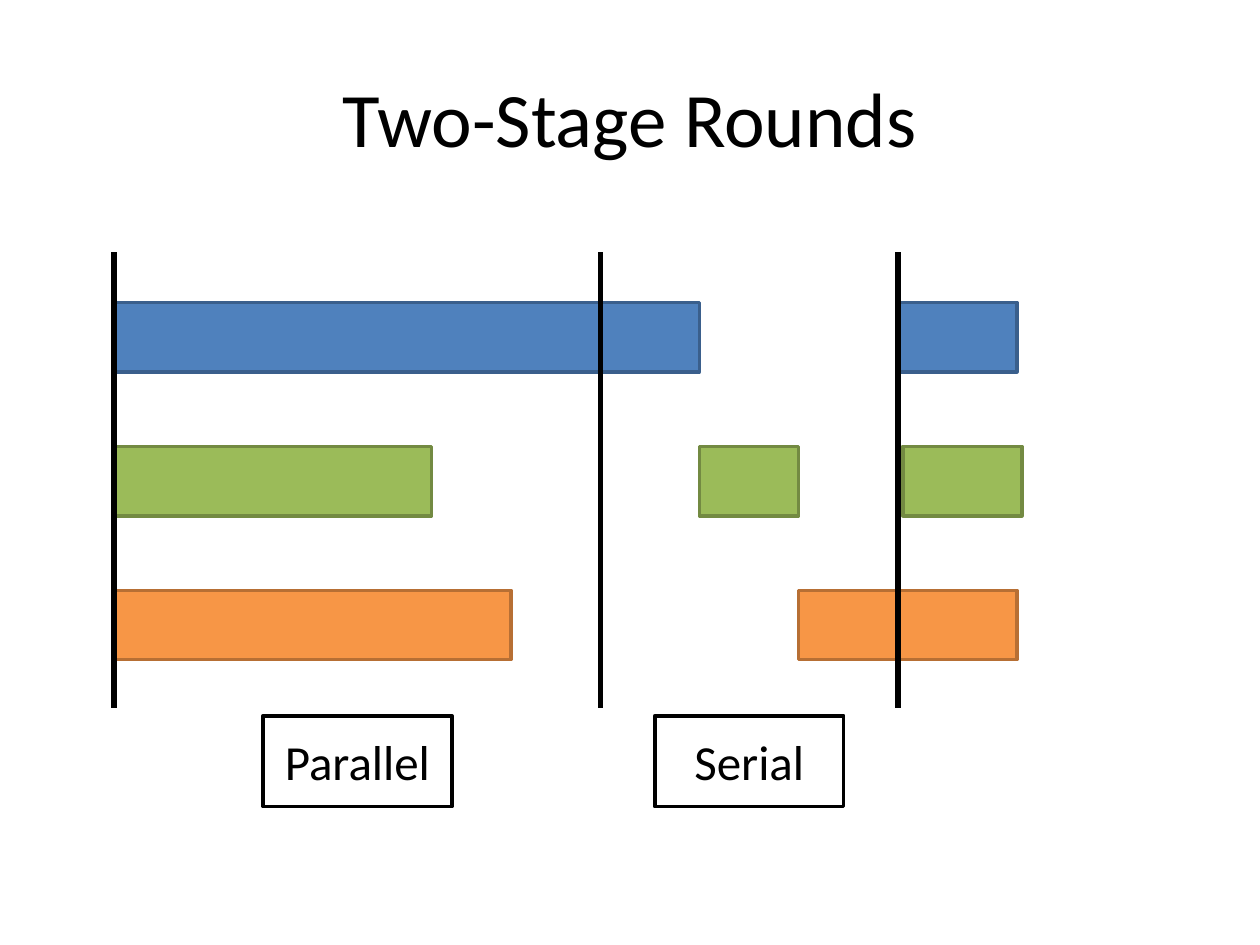
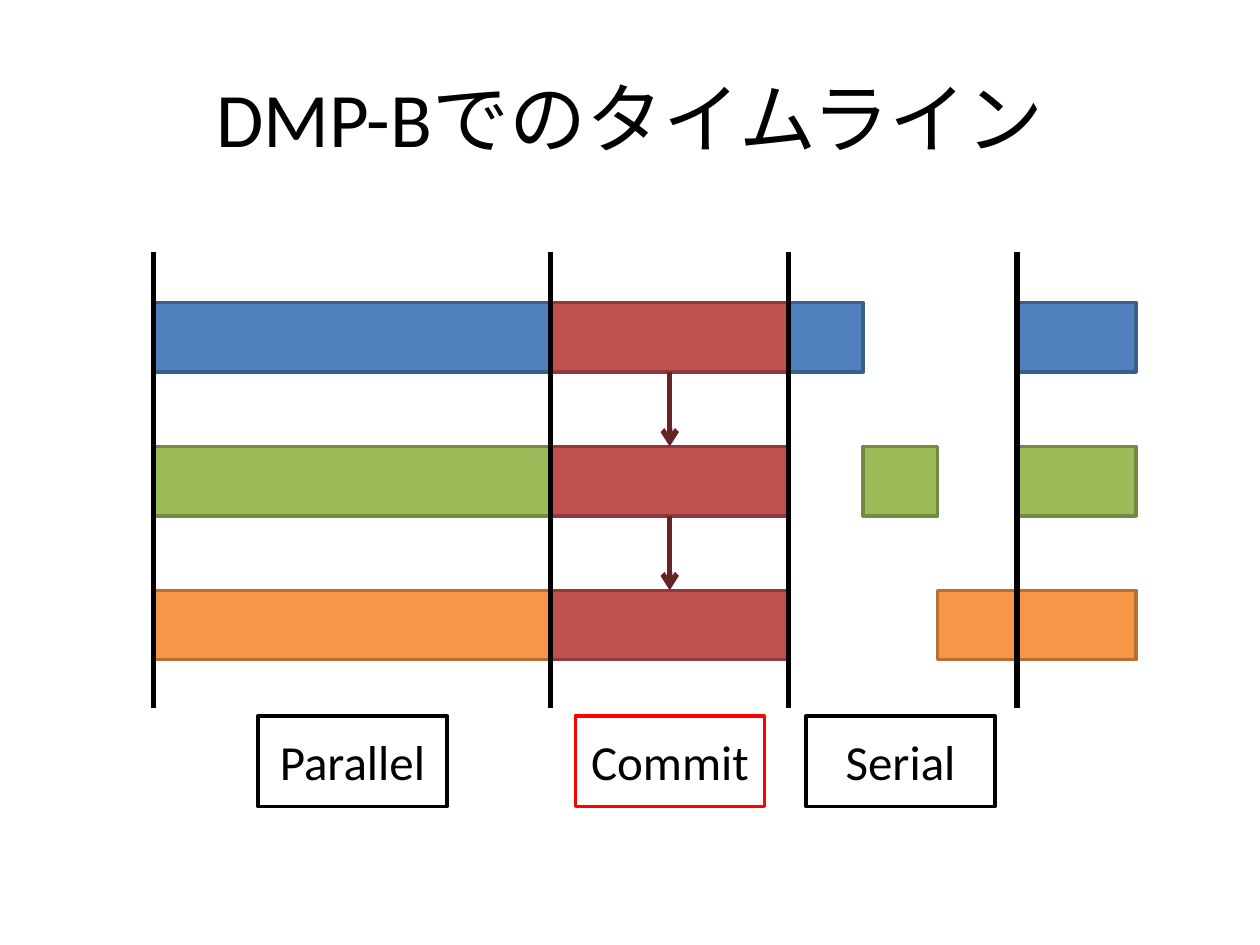
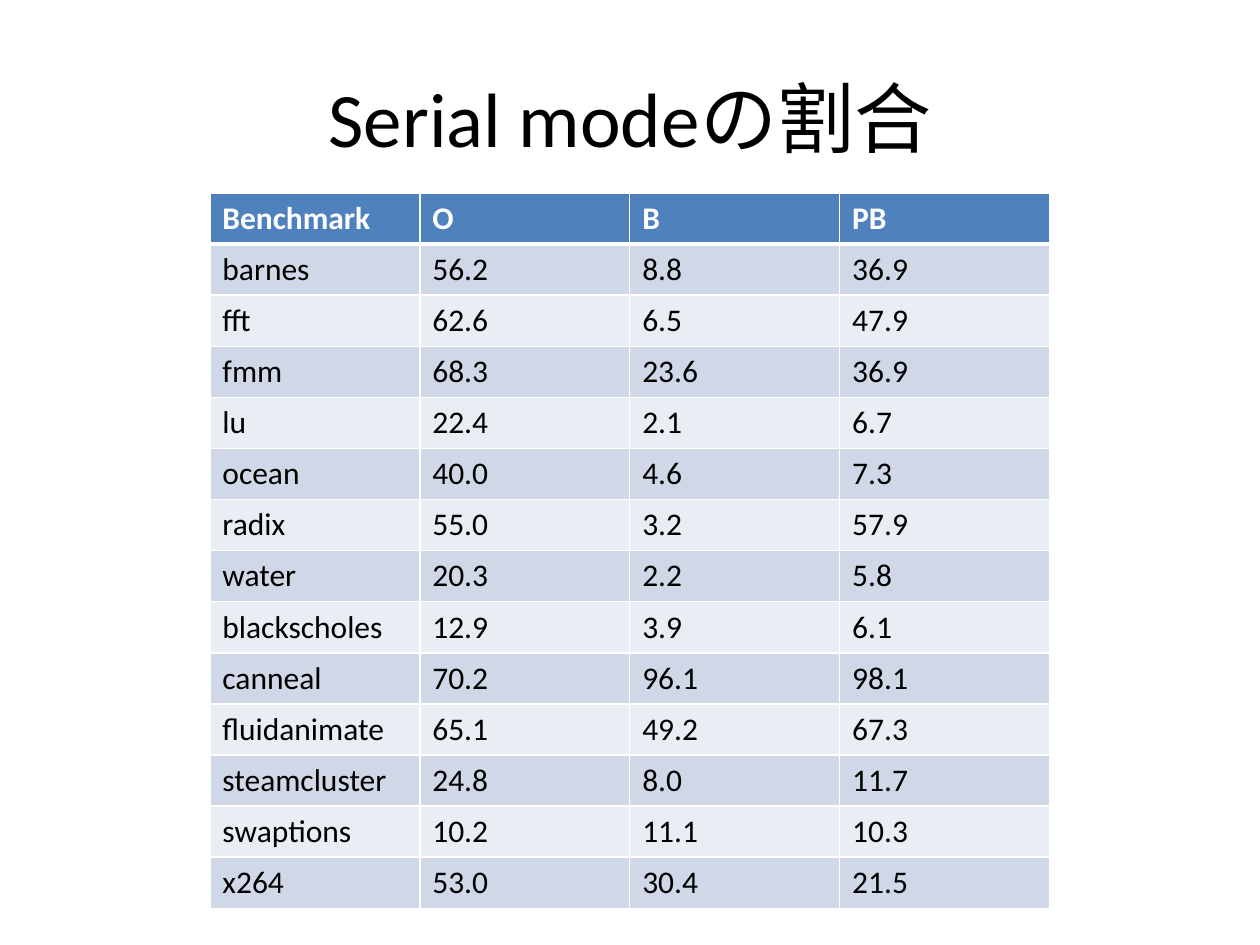
from lxml import etree
from pptx import Presentation
from pptx import util as u
from pptx.dml.color import RGBColor
from pptx.enum import shapes, text
from pptx.oxml import ns

FONT = "Calibri"
COLORS = {
    "black": "000000", "white": "FFFFFF", "red": "FF0000", "arrow": "632523",
    "header": "4F81BD", "odd": "D0D8E8", "even": "E9EDF4",
    "blue": "4F81BD", "blue_edge": "3A5F8C",
    "green": "9BBB59", "green_edge": "738A42",
    "orange": "F79646", "orange_edge": "B76F34",
    "commit": "C0504D", "commit_edge": "8E3B39",
}

TIMELINES = [
    {
        "title": "Two-Stage Rounds",
        "bars": [
            ("blue", 0, 2.3, 9.8), ("green", 1, 2.3, 6.4), ("orange", 2, 2.3, 8),
            ("blue", 0, 12.1, 2), ("green", 1, 14.1, 2), ("orange", 2, 16.1, 2),
            ("blue", 0, 18.1, 2.4), ("green", 1, 18.2, 2.4), ("orange", 2, 18.1, 2.4),
        ],
        "barriers": [2.3, 12.1, 18.1],
        "labels": [("Parallel", 5.3, "black"), ("Serial", 13.2, "black")],
    },
    {
        "title": "DMP-Bでのタイムライン",
        "bars": [
            ("blue", 0, 3.1, 8), ("green", 1, 3.1, 8), ("orange", 2, 3.1, 8),
            ("commit", 0, 11.1, 4.8), ("commit", 1, 11.1, 4.8), ("commit", 2, 11.1, 4.8),
            ("blue", 0, 15.9, 1.5), ("green", 1, 17.4, 1.5), ("orange", 2, 18.9, 1.6),
            ("blue", 0, 20.5, 2.4), ("green", 1, 20.5, 2.4), ("orange", 2, 20.5, 2.4),
        ],
        "barriers": [3.1, 11.1, 15.9, 20.5],
        "labels": [("Parallel", 5.2, "black"), ("Commit", 11.6, "red"), ("Serial", 16.25, "black")],
    },
]

TABLE_TITLE = "Serial modeの割合"
TABLE_ROWS = [
    ("Benchmark", "O", "B", "PB"),
    ("barnes", "56.2", "8.8", "36.9"),
    ("fft", "62.6", "6.5", "47.9"),
    ("fmm", "68.3", "23.6", "36.9"),
    ("lu", "22.4", "2.1", "6.7"),
    ("ocean", "40.0", "4.6", "7.3"),
    ("radix", "55.0", "3.2", "57.9"),
    ("water", "20.3", "2.2", "5.8"),
    ("blackscholes", "12.9", "3.9", "6.1"),
    ("canneal", "70.2", "96.1", "98.1"),
    ("fluidanimate", "65.1", "49.2", "67.3"),
    ("steamcluster", "24.8", "8.0", "11.7"),
    ("swaptions", "10.2", "11.1", "10.3"),
    ("x264", "53.0", "30.4", "21.5"),
]

BAR_TOP, BAR_PITCH, BAR_HEIGHT = 6.1, 2.9, 1.4
BARRIER_TOP, BARRIER_BOTTOM = 5.08, 14.28
LABEL_TOP, LABEL_WIDTH, LABEL_HEIGHT = 14.43, 3.81, 1.83
TABLE_LEFT, TABLE_TOP, TABLE_WIDTH, TABLE_HEIGHT = 4.23, 3.89, 16.93, 14.43


def color(name):
    return RGBColor.from_string(COLORS[name])


def write(frame, words, size, color_name="black", bold=False, align=text.PP_ALIGN.CENTER):
    frame.word_wrap = True
    paragraph = frame.paragraphs[0]
    paragraph.alignment = align
    run = paragraph.add_run()
    run.text = words
    run.font.name = FONT
    run.font.size = u.Pt(size)
    run.font.bold = bold
    run.font.color.rgb = color(color_name)


def add_titled_slide(presentation, title):
    slide = presentation.slides.add_slide(presentation.slide_layouts[6])
    box = slide.shapes.add_textbox(u.Cm(1.27), u.Cm(0.76), u.Cm(22.86), u.Cm(3.18))
    box.text_frame.vertical_anchor = text.MSO_ANCHOR.MIDDLE
    write(box.text_frame, title, 44)
    return slide


def add_box(slide, left, top, width, height, fill, edge):
    shape = slide.shapes.add_shape(
        shapes.MSO_SHAPE.RECTANGLE, u.Cm(left), u.Cm(top), u.Cm(width), u.Cm(height))
    shape.shadow.inherit = False
    shape.fill.solid()
    shape.fill.fore_color.rgb = color(fill)
    shape.line.color.rgb = color(edge)
    shape.line.width = u.Pt(2)
    return shape


def add_line(slide, color_name, left=0, top=0, bottom=0):
    line = slide.shapes.add_connector(
        shapes.MSO_CONNECTOR.STRAIGHT, u.Cm(left), u.Cm(top), u.Cm(left), u.Cm(bottom))
    line.line.color.rgb = color(color_name)
    line.line.width = u.Pt(3)
    etree.SubElement(line._element.spPr, ns.qn("a:effectLst"))
    return line


def add_arrow(slide, upper, lower):
    arrow = add_line(slide, "arrow")
    arrow.begin_connect(upper, 2)
    arrow.end_connect(lower, 0)
    etree.SubElement(arrow.line._get_or_add_ln(), ns.qn("a:tailEnd"), type="arrow")


def add_timeline(presentation, timeline):
    slide = add_titled_slide(presentation, timeline["title"])
    commits = []
    for name, row, left, width in timeline["bars"]:
        bar = add_box(slide, left, BAR_TOP + row * BAR_PITCH, width, BAR_HEIGHT,
                      name, name + "_edge")
        if name == "commit":
            commits.append(bar)
    for left in timeline["barriers"]:
        add_line(slide, "black", left, BARRIER_TOP, BARRIER_BOTTOM)
    for words, left, edge in timeline["labels"]:
        label = add_box(slide, left, LABEL_TOP, LABEL_WIDTH, LABEL_HEIGHT, "white", edge)
        label.text_frame.vertical_anchor = text.MSO_ANCHOR.MIDDLE
        write(label.text_frame, words, 28)
    for upper, lower in zip(commits, commits[1:]):
        add_arrow(slide, upper, lower)


def set_borders(cell, bottom_width, top_width):
    properties = cell._tc.get_or_add_tcPr()
    for side, width in (("L", 1), ("R", 1), ("T", top_width), ("B", bottom_width)):
        border = etree.SubElement(properties, ns.qn("a:ln" + side), w=str(u.Pt(width)))
        fill = etree.SubElement(border, ns.qn("a:solidFill"))
        etree.SubElement(fill, ns.qn("a:srgbClr"), val=COLORS["white"])


def add_benchmark_table(presentation):
    slide = add_titled_slide(presentation, TABLE_TITLE)
    table = slide.shapes.add_table(
        len(TABLE_ROWS), len(TABLE_ROWS[0]), u.Cm(TABLE_LEFT), u.Cm(TABLE_TOP),
        u.Cm(TABLE_WIDTH), u.Cm(TABLE_HEIGHT)).table
    for row, values in enumerate(TABLE_ROWS):
        header = row == 0
        fill = "header" if header else ("even", "odd")[row % 2]
        for column, value in enumerate(values):
            cell = table.cell(row, column)
            set_borders(cell, 3 if header else 1, 3 if row == 1 else 1)
            cell.fill.solid()
            cell.fill.fore_color.rgb = color(fill)
            write(cell.text_frame, value, 18, "white" if header else "black", header,
                  text.PP_ALIGN.LEFT)


def main():
    presentation = Presentation()
    presentation.slide_width = u.Cm(25.4)
    presentation.slide_height = u.Cm(19.05)
    for timeline in TIMELINES:
        add_timeline(presentation, timeline)
    add_benchmark_table(presentation)
    presentation.save("out.pptx")


if __name__ == "__main__":
    main()
